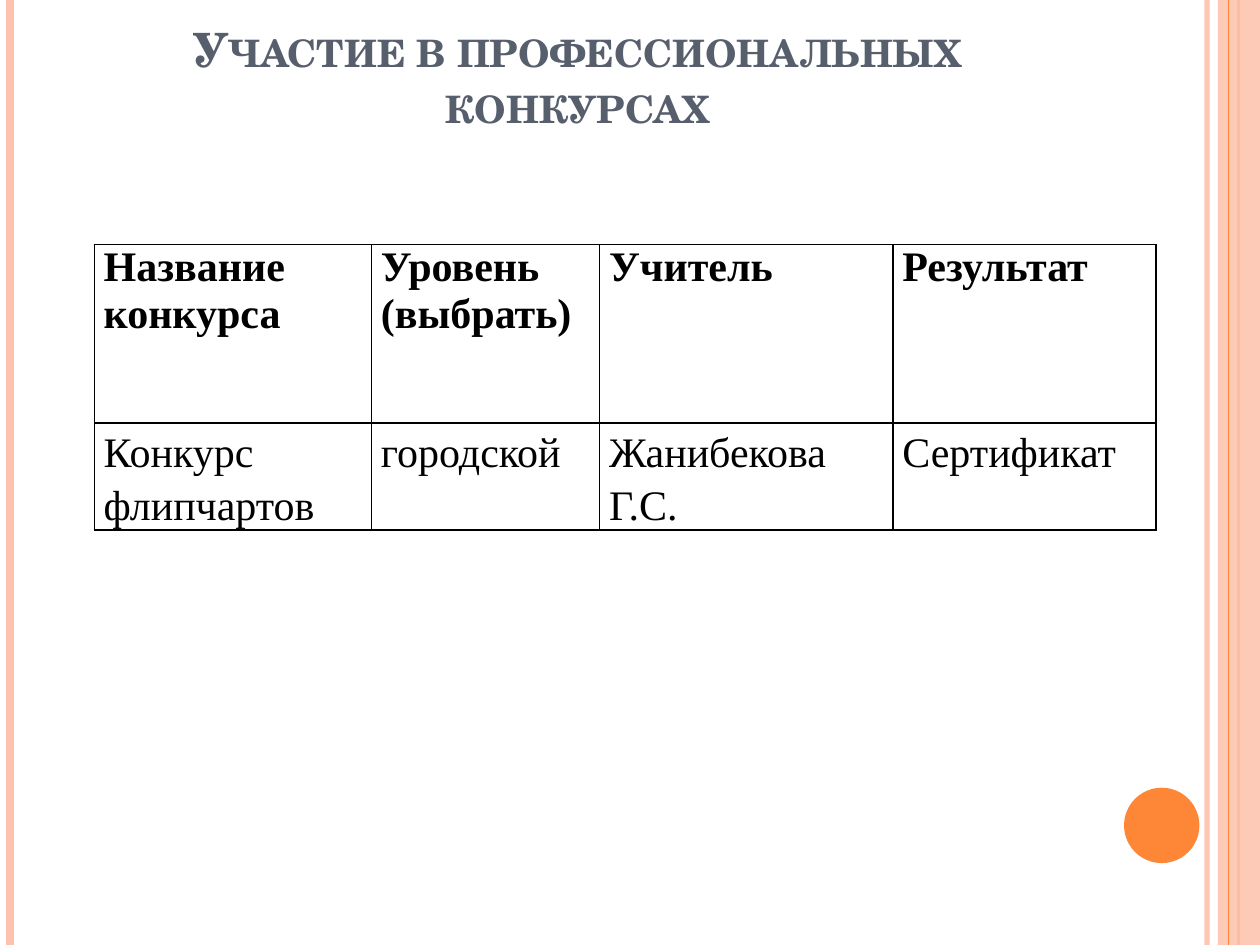
from lxml.etree import SubElement
from pptx import Presentation
from pptx.dml.color import RGBColor
from pptx.enum.shapes import MSO_CONNECTOR as Conn, MSO_SHAPE as Shape
from pptx.enum.text import MSO_ANCHOR as Anchor, PP_ALIGN as Align
from pptx.oxml.ns import qn
from pptx.util import Cm, Pt

COLORS = {"peach": "FEC3AE", "orange": "FE8637", "slate": "575F6D", "black": "000000"}
WIDTH, HEIGHT = 25.4, 19.05


def rgb(name):
    return RGBColor.from_string(COLORS[name])


def set_alpha(fill_parent, percent):
    color = next(fill_parent.iter(qn("a:srgbClr")))
    SubElement(color, qn("a:alpha"), val=str(percent * 1000))


class SlideBuilder:
    title_font = "TeX Gyre Schola"
    body_font = "Times New Roman"

    def __init__(self, slide):
        self.s = slide

    def run(self, p, text, font, size, color, bold):
        r = p.add_run()
        r.text = text
        r.font.name, r.font.size, r.font.bold = font, Pt(size), bold
        r.font.color.rgb = rgb(color)
        return r

    def stripe(self, x, color, width, alpha=None):
        """Full-height vertical line."""
        line = self.s.shapes.add_connector(Conn.STRAIGHT, Cm(x), 0, Cm(x), Cm(HEIGHT))
        line.line.color.rgb = rgb(color)
        line.line.width = Pt(width)
        props = line._element.spPr
        SubElement(props, qn("a:effectLst"))
        if alpha:
            set_alpha(props, alpha)

    def shape(self, kind, x, y, w, h, color, alpha=None):
        sp = self.s.shapes.add_shape(kind, Cm(x), Cm(y), Cm(w), Cm(h))
        sp.shadow.inherit = False
        sp.fill.solid()
        sp.fill.fore_color.rgb = rgb(color)
        sp.line.fill.background()
        if alpha:
            set_alpha(sp._element.spPr, alpha)

    def title(self, text, x, y, w, h):
        sp = self.s.shapes.title
        sp.left, sp.top, sp.width, sp.height = Cm(x), Cm(y), Cm(w), Cm(h)
        tf = sp.text_frame
        tf.word_wrap = True
        tf.vertical_anchor = Anchor.BOTTOM
        tf.margin_bottom = Cm(1.25)
        p = tf.paragraphs[0]
        p.alignment = Align.CENTER
        r = self.run(p, text, self.title_font, 27, "slate", True)
        r.font._element.set("cap", "small")

    def table(self, rows, x, y, widths, heights):
        """Plain bordered table; a line break in a cell starts a new paragraph."""
        table = self.s.shapes.add_table(
            len(rows), len(widths), Cm(x), Cm(y), Cm(sum(widths)), Cm(sum(heights))
        ).table
        table.horz_banding = False
        for col, width in zip(table.columns, widths):
            col.width = Cm(width)
        for row, height in zip(table.rows, heights):
            row.height = Cm(height)
        for i, row in enumerate(rows):
            for j, text in enumerate(row):
                self.cell(table.cell(i, j), text, header=i == 0)

    def cell(self, cell, text, header):
        cell.margin_left = cell.margin_right = Cm(0.19)
        cell.margin_top = cell.margin_bottom = 0
        tf = cell.text_frame
        for n, part in enumerate(text.split("\n")):
            p = tf.add_paragraph() if n else tf.paragraphs[0]
            if not header:
                p.line_spacing = 1.15
            self.run(p, part, self.body_font, 24, "black", header)
        props = cell._tc.get_or_add_tcPr()
        for side in ("lnL", "lnR", "lnT", "lnB"):
            border = SubElement(props, qn(f"a:{side}"), w=str(Pt(1)))
            fill = SubElement(border, qn("a:solidFill"))
            SubElement(fill, qn("a:srgbClr"), val=COLORS["black"])
        cell.fill.background()


def main():
    prs = Presentation()
    prs.slide_width, prs.slide_height = Cm(WIDTH), Cm(HEIGHT)
    b = SlideBuilder(prs.slides.add_slide(prs.slide_layouts[5]))

    b.stripe(24.33, "peach", 3, alpha=93)
    b.stripe(0.21, "peach", 4.5)
    b.stripe(24.97, "orange", 1.5)
    b.shape(Shape.RECTANGLE, 24.55, 0, WIDTH - 24.55, HEIGHT, "peach", alpha=87)
    b.stripe(24.76, "orange", 0.75)
    b.shape(Shape.OVAL, 22.66, 15.88, 1.52, 1.52, "orange")

    b.title("Участие в профессиональных конкурсах", 1.27, 0.76, 20.75, 3.18)
    b.table(
        [
            ["Название конкурса", "Уровень\n(выбрать)", "Учитель", "Результат"],
            ["Конкурс флипчартов", "городской", "Жанибекова Г.С.", "Сертификат"],
        ],
        1.9, 4.93, widths=[5.59, 4.6, 5.91, 5.31], heights=[3.6, 1.8],
    )
    prs.save("out.pptx")


if __name__ == "__main__":
    main()
